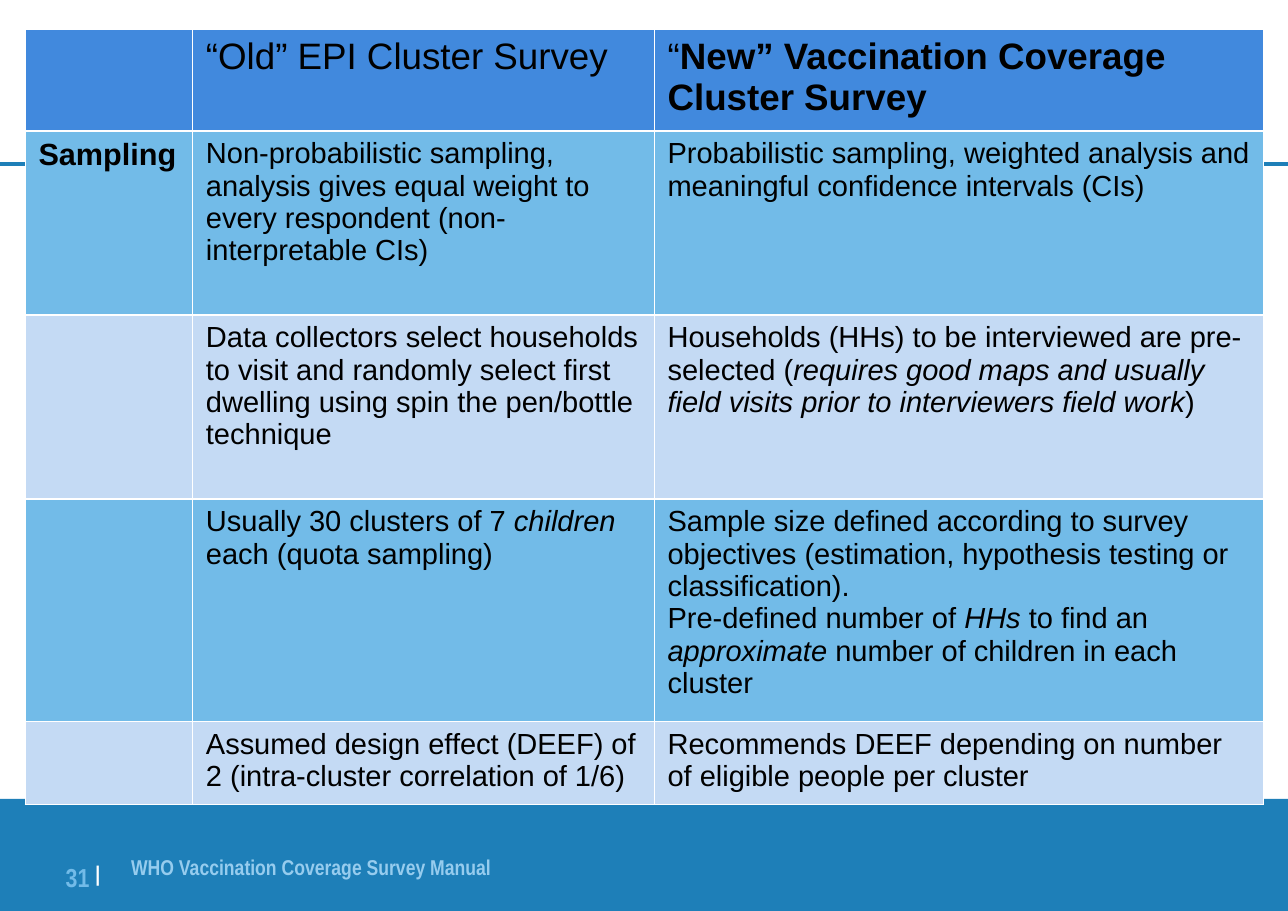
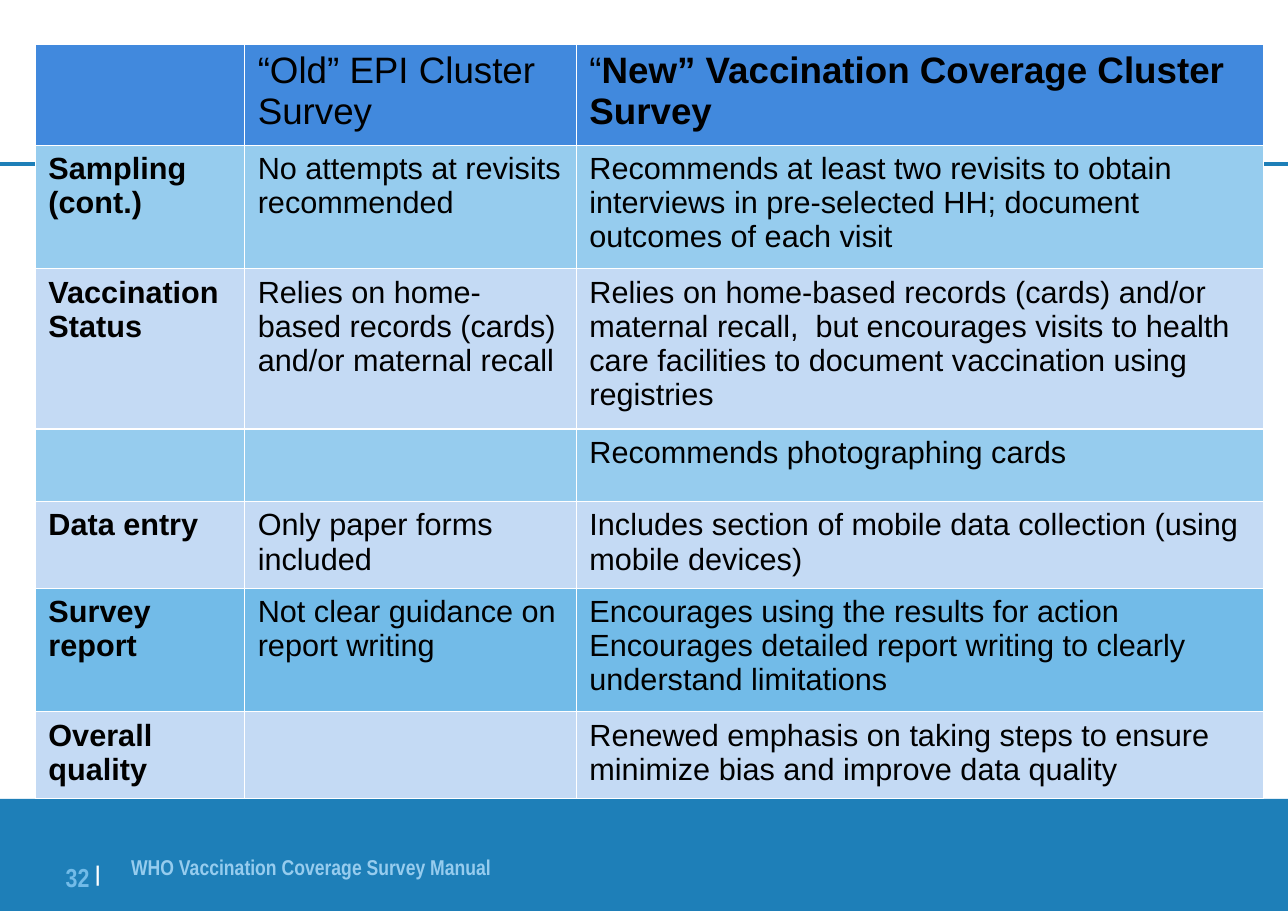
from lxml.etree import SubElement
from pptx import Presentation
from pptx.dml.color import RGBColor
from pptx.enum.shapes import MSO_CONNECTOR, MSO_SHAPE
from pptx.enum.text import MSO_ANCHOR, PP_ALIGN
from pptx.oxml.ns import qn
from pptx.util import Inches, Pt

COLORS = {
    "band": "1E7FB8", "header": "4189DD", "sky": "72BBE8", "pale": "96CCEE",
    "mist": "C4DAF4", "white": "FFFFFF", "black": "000000",
}
BODY, NARROW = "Arial", "Arial Narrow"
WIDTH, HEIGHT = Inches(11.69), Inches(8.27)
RULE_TOP = round(HEIGHT * 0.18)
BAND_TOP = round(HEIGHT * 0.877)
HEADER = ["", "“Old” EPI Cluster Survey", "“*New” Vaccination Coverage Cluster Survey"]

PAGES = [
    {
        "number": 31, "left": 0.23, "top": 0.27, "size": 19,
        "columns": [1.52, 4.19, 5.53],
        "rows": [
            (0.85, "header", HEADER),
            (1.67, "sky", [
                "Sampling",
                "Non-probabilistic sampling, analysis gives equal weight to every respondent (non-interpretable CIs)",
                "Probabilistic sampling, weighted analysis and meaningful confidence intervals (CIs)"]),
            (1.67, "mist", [
                "",
                "Data collectors select households to visit and randomly select first dwelling using spin the pen/bottle technique",
                "Households (HHs) to be interviewed are pre-selected (*requires good maps and usually field visits prior to interviewers field work*)"]),
            (1.87, "sky", [
                "",
                "Usually 30 clusters of 7 *children* each (quota sampling)",
                "Sample size defined according to survey objectives (estimation, hypothesis testing or classification).\n"
                "Pre-defined number of *HHs* to find an *approximate* number of children in each cluster"]),
            (0.74, "mist", [
                "",
                "Assumed design effect (DEEF) of 2 (intra-cluster correlation of 1/6)",
                "Recommends DEEF depending on number of eligible people per cluster"]),
        ],
    },
    {
        "number": 32, "left": 0.32, "top": 0.4, "size": 20,
        "columns": [1.9, 3.01, 6.24],
        "rows": [
            (0.85, "header", HEADER),
            (1.1, "pale", [
                "Sampling\n(cont.)",
                "No attempts at revisits recommended",
                "Recommends at least two revisits to obtain interviews in pre-selected HH; document outcomes of each visit"]),
            (1.34, "mist", [
                "Vaccination Status",
                "Relies on home-based records (cards) and/or maternal recall",
                "Relies on home-based records (cards) and/or maternal recall,  but encourages visits to health care facilities to document vaccination using registries"]),
            (0.66, "pale", ["", "", "Recommends photographing cards"]),
            (0.77, "mist", [
                "Data entry",
                "Only paper forms included",
                "Includes section of mobile data collection (using mobile devices)"]),
            (1.1, "sky", [
                "Survey report",
                "Not clear guidance on report writing",
                "Encourages using the results for action\n"
                "Encourages detailed report writing to clearly understand limitations"]),
            (0.77, "mist", [
                "Overall quality",
                "",
                "Renewed emphasis on taking steps to ensure minimize bias and improve data quality"]),
        ],
    },
]


def set_font(font, size, name, color, bold=False):
    font.size, font.name, font.bold = Pt(size), name, bold
    font.color.rgb = RGBColor.from_string(COLORS[color])


def add_box(page, left, top, width, height):
    box = page.shapes.add_textbox(Inches(left), Inches(top), Inches(width), Inches(height))
    frame = box.text_frame
    frame.word_wrap = True
    frame.margin_left = frame.margin_right = frame.margin_top = frame.margin_bottom = 0
    return box


deck = Presentation()
deck.slide_width, deck.slide_height = WIDTH, HEIGHT
blank = deck.slide_layouts[6]
pages = [deck.slides.add_slide(blank) for _ in PAGES]

rule = pages[0].shapes.add_connector(MSO_CONNECTOR.STRAIGHT, 0, RULE_TOP, WIDTH, RULE_TOP)
rule.line.width = Pt(3)
rule.line.color.rgb = RGBColor.from_string(COLORS["band"])
SubElement(rule.element.spPr, qn("a:effectLst"))

band = pages[0].shapes.add_shape(MSO_SHAPE.RECTANGLE, 0, BAND_TOP, WIDTH, HEIGHT - BAND_TOP)
band.shadow.inherit = False
band.fill.solid()
band.fill.fore_color.rgb = RGBColor.from_string(COLORS["band"])
band.line.fill.background()

footer = add_box(pages[0], 1.19, 7.75, 5.43, 0.52)
para = footer.text_frame.paragraphs[0]
para.text = "WHO Vaccination Coverage Survey Manual"
set_font(para.font, 14, NARROW, "pale", bold=True)

for shape in (rule, band, footer):
    deck.slide_master.shapes.element.append(shape.element)

for page, content in zip(pages, PAGES):
    box = add_box(page, 0.46, 7.72, 0.45, 0.4)
    box.text_frame.vertical_anchor = MSO_ANCHOR.BOTTOM
    para = box.text_frame.paragraphs[0]
    para.alignment = PP_ALIGN.RIGHT
    for text, size, color in ((f"{content['number']} ", 17, "sky"), ("|", 24, "white")):
        span = para.add_run()
        span.text = text
        set_font(span.font, size, NARROW, color, bold=True)
    span.font._element.set("baseline", "14000")

    rows, columns = content["rows"], content["columns"]
    table = page.shapes.add_table(
        len(rows), len(columns), Inches(content["left"]), Inches(content["top"]),
        Inches(sum(columns)), Inches(sum(row[0] for row in rows))).table
    table.first_row = table.horz_banding = False
    for column, width in zip(table.columns, columns):
        column.width = Inches(width)

    for row_index, (height, fill, texts) in enumerate(rows):
        table.rows[row_index].height = Inches(height)
        is_header = row_index == 0
        for column_index, text in enumerate(texts):
            cell = table.cell(row_index, column_index)
            cell.margin_left = cell.margin_right = Inches(0.12)
            cell.margin_top = cell.margin_bottom = Inches(0.06)
            for side in ("lnL", "lnR", "lnT", "lnB"):
                border = SubElement(cell._tc.get_or_add_tcPr(), qn(f"a:{side}"), w=str(Pt(1)))
                paint = SubElement(border, qn("a:solidFill"))
                SubElement(paint, qn("a:srgbClr"), val=COLORS["white"])
            cell.fill.solid()
            cell.fill.fore_color.rgb = RGBColor.from_string(COLORS[fill])

            is_label = column_index == 0
            size = 24 if is_header else 20 if is_label else content["size"]
            for line_index, line in enumerate(text.split("\n")):
                frame = cell.text_frame
                para = frame.add_paragraph() if line_index else frame.paragraphs[0]
                set_font(para.font, size, BODY, "black", bold=is_label)
                for part_index, part in enumerate(line.split("*")):
                    if not part:
                        continue
                    span = para.add_run()
                    span.text = part
                    if part_index % 2:
                        if is_header:
                            span.font.bold = True
                        else:
                            span.font.italic = True

deck.save("out.pptx")
